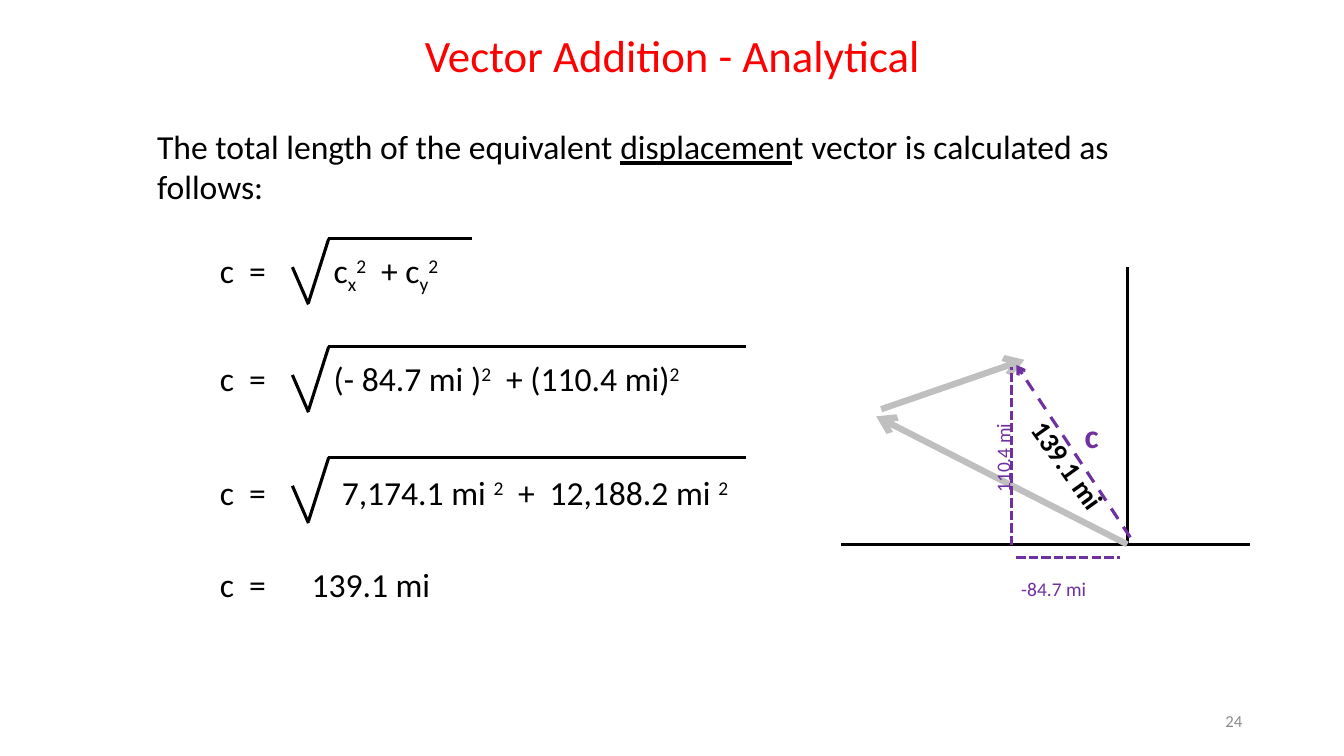
from pptx import Presentation
from pptx.dml.color import RGBColor
from pptx.enum import dml, shapes, text
from pptx.oxml import ns, xmlchemy as xc
from pptx.util import Inches, Pt

COLORS = {"title": "FF0000", "ink": "000000", "path": "BFBFBF",
          "sum": "7030A0", "page": "8C8C8C"}
SUB, SUP = -25, 30
DASH = dml.MSO_LINE.DASH
DOT = dml.MSO_LINE.SQUARE_DOT


def rgb(name):
    return RGBColor.from_string(COLORS[name])


def add_run(para, words, size=24, color="ink", bold=False, under=False, base=0):
    run = para.add_run()
    run.text = words
    font = run.font
    font.name, font.size, font.bold = "Calibri", Pt(size), bold
    font.color.rgb = rgb(color)
    if under:
        font.underline = True
    if base:
        font._element.set("baseline", str(base * 1000))


def place(shape, box):
    shape.left, shape.top, shape.width, shape.height = map(Inches, box)


def add_text(parent, box, words="", turn=0, **style):
    """Add a wrapping text box and return it, with a first run if words are given."""
    shape = parent.add_textbox(*map(Inches, box))
    shape.rotation = turn
    shape.text_frame.word_wrap = True
    if words:
        add_run(shape.text_frame.paragraphs[0], words, **style)
    return shape


def add_line(parent, start, end, color="ink", width=2.25, dash=None, arrow=False):
    line = parent.add_connector(shapes.MSO_CONNECTOR.STRAIGHT,
                                *map(Inches, start + end))
    line.line.color.rgb = rgb(color)
    line.line.width = Pt(width)
    if dash:
        line.line.dash_style = dash
    if arrow:
        tail = xc.OxmlElement("a:tailEnd")
        tail.set("type", "arrow")
        line.line._get_or_add_ln().append(tail)
    line._element.spPr.append(xc.OxmlElement("a:effectLst"))


def add_root(slide, top, right):
    """Draw a square root sign whose bar runs to the right edge."""
    root = slide.shapes.add_group_shape().shapes
    add_line(root, (3.25, top), (right, top))
    add_line(root, (2.9, top + 0.28), (3.06, top + 0.65))
    add_line(root, (3.06, top + 0.63), (3.26, top))


def add_step(slide, top, width, stops, runs):
    """Write one line of the sum, aligned at tab stops given in inches."""
    frame = add_text(slide.shapes, (1.86, top, width, 0.5)).text_frame
    frame.margin_left = Inches(0.32)
    para = frame.paragraphs[0]
    tabs = xc.OxmlElement("a:tabLst")
    for stop in [0.29] + stops:
        tab = xc.OxmlElement("a:tab")
        tab.set("pos", str(Inches(stop)))
        tab.set("algn", "l")
        tabs.append(tab)
    para._p.get_or_add_pPr().append(tabs)
    add_run(para, "c\t=\t")
    for words, base in runs:
        add_run(para, words, base=base)


def add_title(slide):
    title = slide.shapes.title
    place(title, (3.73, 0.22, 5.88, 0.64))
    frame = title.text_frame
    frame.auto_size = text.MSO_AUTO_SIZE.NONE
    frame.vertical_anchor = text.MSO_ANCHOR.TOP
    frame.paragraphs[0].alignment = text.PP_ALIGN.CENTER
    add_run(frame.paragraphs[0], "Vector Addition - Analytical", 32, "title")


def add_graph(slide):
    graph = slide.shapes.add_group_shape().shapes
    add_line(graph, (11.18, 2.65), (11.18, 5.4))
    add_line(graph, (12.4, 5.4), (8.34, 5.4))
    add_line(graph, (11.18, 5.4), (8.69, 4.13), "path", 4.5, arrow=True)
    add_line(graph, (8.74, 4.06), (10.16, 3.57), "path", 4.5, arrow=True)
    add_line(graph, (11.21, 5.33), (10.08, 3.62), "sum", dash=DASH, arrow=True)
    add_text(graph, (10.66, 4.07, 0.53, 0.5), "c", color="sum", bold=True)
    add_line(graph, (10.03, 5.41), (10.03, 3.64), "sum", dash=DOT)
    add_text(graph, (9.08, 4.14, 1.32, 0.37), "110.4 mi", 270,
             color="sum", base=SUB)
    add_line(graph, (10.08, 5.53), (11.11, 5.53), "sum", dash=DOT)
    add_text(graph, (10.03, 5.45, 1.05, 0.37), "-84.7 mi",
             color="sum", base=SUB)
    add_text(slide.shapes, (9.95, 4.48, 1.4, 0.44), "139.1 mi", 54.4,
             size=20, bold=True)


def main():
    deck = Presentation()
    deck.slide_width, deck.slide_height = Inches(13.33), Inches(7.5)
    slide = deck.slides.add_slide(deck.slide_layouts[5])
    add_title(slide)

    intro = add_text(slide.shapes, (1.46, 1.2, 10.12, 0.91),
                     "The total length of the equivalent ")
    para = intro.text_frame.paragraphs[0]
    add_run(para, "displacemen", under=True)
    add_run(para, "t vector is calculated as follows:")

    for top, right in ((2.37, 4.68), (3.44, 7.4), (4.54, 7.4)):
        add_root(slide, top, right)
    add_step(slide, 2.43, 3.05, [1.13, 1.6],
             [("c", 0), ("x", SUB), ("2", SUP), ("\t+ c", 0),
              ("y", SUB), ("2", SUP)])
    add_step(slide, 3.5, 5.32, [1.13, 2.84],
             [("(- 84.7 mi )", 0), ("2", SUP), ("\t+ (110.4 mi)", 0), ("2", SUP)])
    add_step(slide, 4.63, 5.91, [1.21, 2.96, 3.27],
             [("7,174.1 mi ", 0), ("2", SUP), ("\t+\t12,188.2 mi ", 0), ("2", SUP)])
    add_step(slide, 5.55, 5.65, [0.91], [("139.1 mi", 0)])

    add_graph(slide)

    page = add_text(slide.shapes, (9.42, 6.95, 3, 0.4), "24",
                    size=12, color="page").text_frame
    page.vertical_anchor = text.MSO_ANCHOR.MIDDLE
    page.paragraphs[0].alignment = text.PP_ALIGN.RIGHT
    deck.save("out.pptx")


if __name__ == "__main__":
    main()
